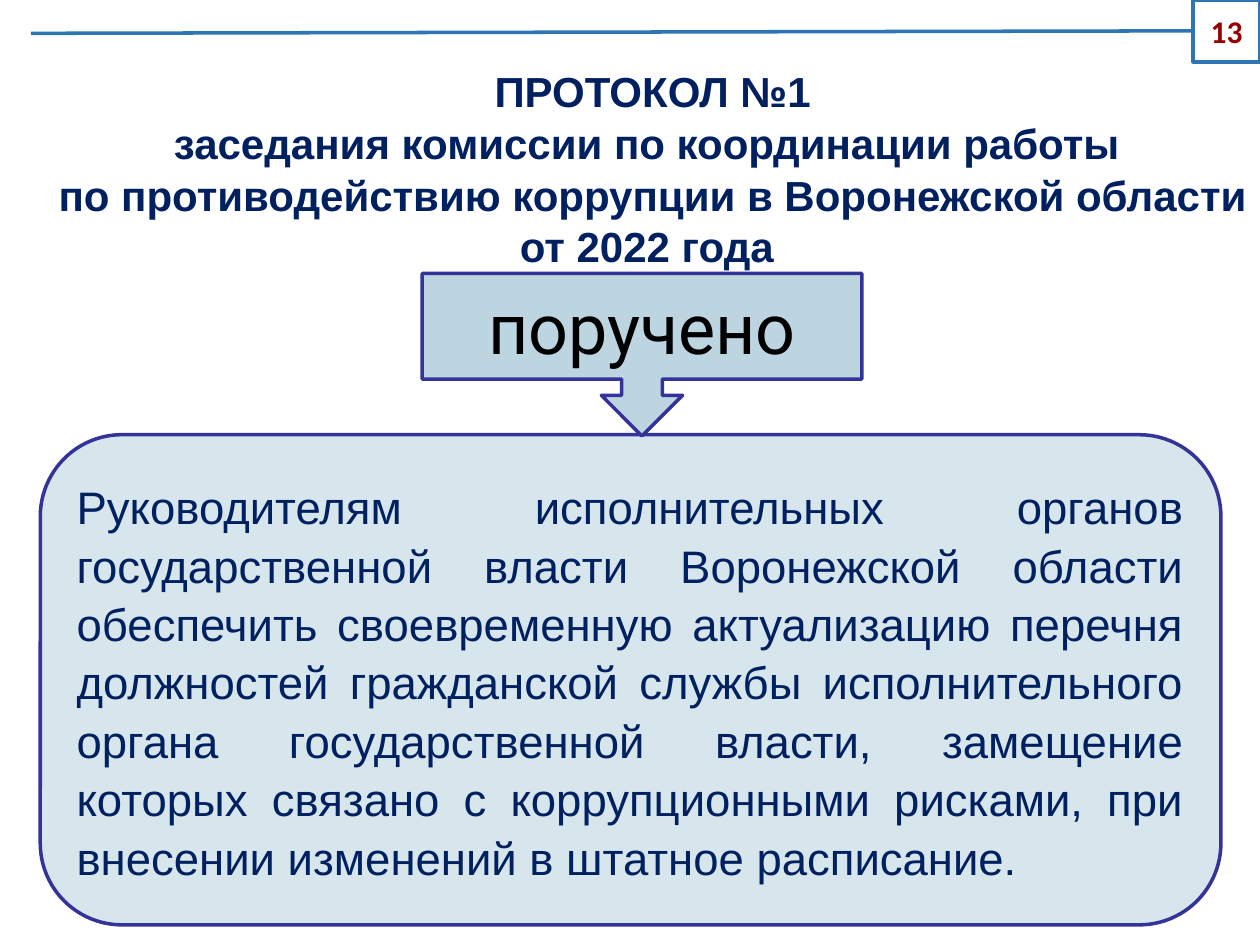
from pptx import Presentation
from pptx.dml.color import RGBColor
from pptx.enum.shapes import MSO_SHAPE
from pptx.enum.text import MSO_ANCHOR, MSO_AUTO_SIZE, PP_ALIGN
from pptx.util import Inches, Pt

ROUNDED = MSO_SHAPE.ROUNDED_RECTANGLE
ARROW_CALLOUT = MSO_SHAPE.DOWN_ARROW_CALLOUT
LINE_CALLOUT = MSO_SHAPE.LINE_CALLOUT_1
CENTER, JUSTIFY = PP_ALIGN.CENTER, PP_ALIGN.JUSTIFY
MIDDLE = MSO_ANCHOR.MIDDLE
NO_FIT = MSO_AUTO_SIZE.NONE

NAVY, INDIGO, BLUE, RED = "002060", "333399", "2E75B6", "960000"

TITLE = [
    "ПРОТОКОЛ №1",
    "заседания комиссии по координации работы ",
    "по противодействию коррупции в Воронежской области от 2022 года ",
]
ORDER = (
    "Руководителям исполнительных органов государственной власти "
    "Воронежской области обеспечить своевременную актуализацию перечня "
    "должностей гражданской службы исполнительного органа государственной "
    "власти, замещение которых связано с коррупционными рисками, при "
    "внесении изменений в штатное расписание."
)


def rgb(value):
    return RGBColor.from_string(value)


class Deck:
    def __init__(self):
        self.prs = Presentation()
        self.prs.slide_width, self.prs.slide_height = Inches(10), Inches(7.5)
        self.s = None

    def add_slide(self):
        self.s = self.prs.slides.add_slide(self.prs.slide_layouts[5])

    def add_text(self, sp, lines, size, color, font="Arial", bold=False,
                 align=CENTER, spacing=1.0, after=0):
        tf = sp.text_frame
        tf.word_wrap = True
        tf.auto_size = NO_FIT
        tf.vertical_anchor = MIDDLE
        p = tf.paragraphs[0]
        p.alignment = align
        p.line_spacing = spacing
        p.space_before, p.space_after = Pt(0), Pt(after)
        for i, line in enumerate(lines):
            if i:
                p.add_line_break()
            r = p.add_run()
            r.text = line
            r.font.name, r.font.size, r.font.bold = font, Pt(size), bold
            r.font.color.rgb = rgb(color)

    def title(self, box, lines, **style):
        sp = self.s.shapes.title
        sp.left, sp.top, sp.width, sp.height = map(Inches, box)
        self.add_text(sp, lines, **style)

    def shape(self, kind, box, line, text, fill=None, adj=(), **style):
        sp = self.s.shapes.add_shape(kind, *map(Inches, box))
        sp.shadow.inherit = False
        for i, value in enumerate(adj):
            sp.adjustments[i] = value
        if fill:
            sp.fill.solid()
            sp.fill.fore_color.rgb = rgb(fill)
        else:
            sp.fill.background()
        sp.line.color.rgb = rgb(line)
        sp.line.width = Pt(2)
        self.add_text(sp, [text], **style)


def main():
    deck = Deck()
    deck.add_slide()
    deck.title((0.18, 0.49, 10, 1.68), TITLE, size=24, color=NAVY,
               bold=True, spacing=1.03)
    deck.shape(ROUNDED, (0.32, 3.45, 9.37, 3.89), INDIGO, ORDER, "D7E5ED",
               size=26, color=NAVY, align=JUSTIFY, spacing=1.07, after=12)
    deck.shape(ARROW_CALLOUT, (3.35, 2.17, 3.49, 1.29), INDIGO, "поручено",
               "BDD4E1", size=40, color="000000", font="Roboto")
    deck.shape(LINE_CALLOUT, (9.47, 0, 0.53, 0.49), BLUE, "13",
               adj=(0.5, -0.01, 0.54, -17.41), size=18, color=RED,
               font="Calibri", bold=True)
    deck.prs.save("out.pptx")


if __name__ == "__main__":
    main()
